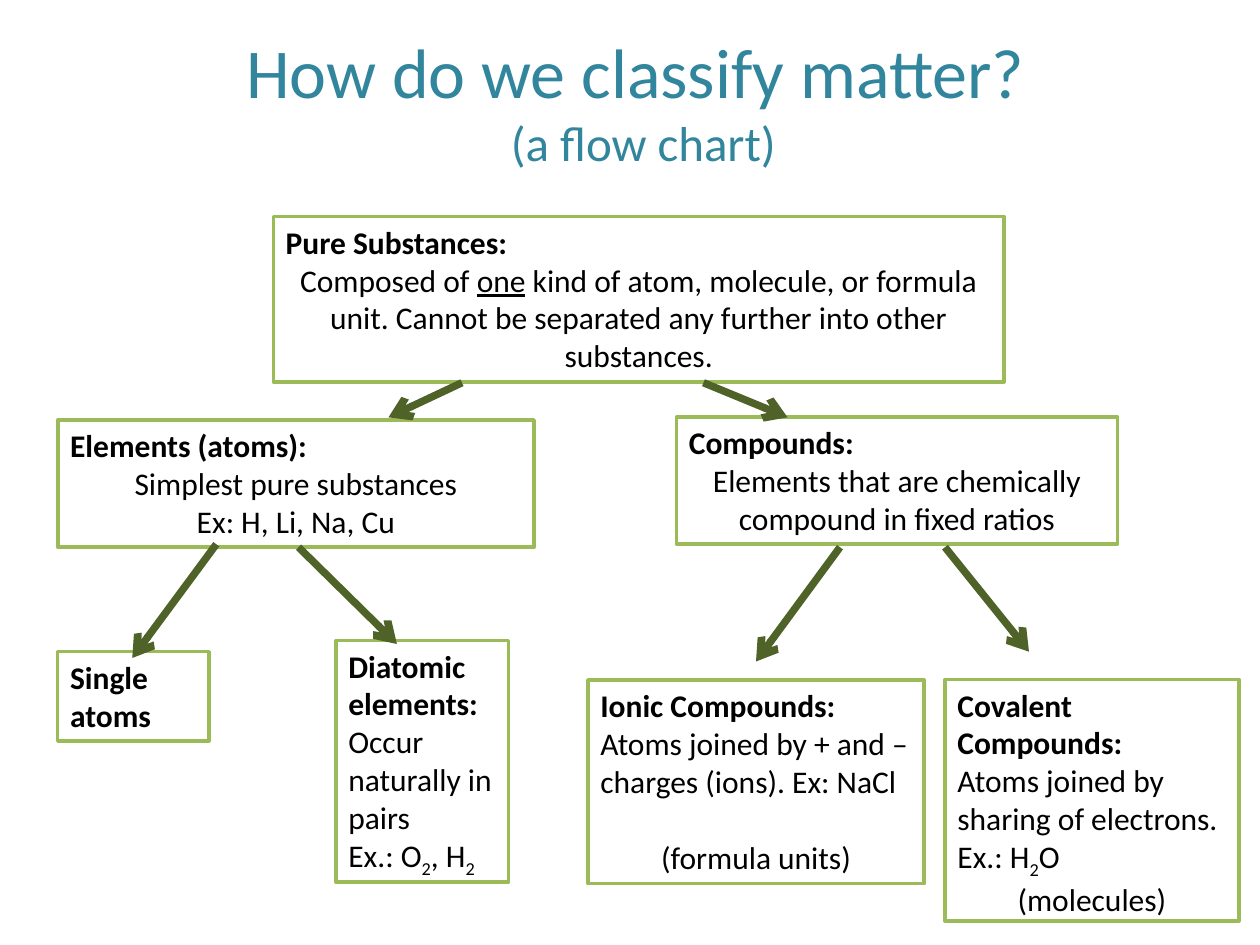
from dataclasses import dataclass

import pptx
import pptx.dml.color
import pptx.enum.shapes
import pptx.enum.text
import pptx.oxml.ns
import pptx.util
from lxml import etree

Pt = pptx.util.Pt
RGBColor = pptx.dml.color.RGBColor
ALIGN = pptx.enum.text.PP_ALIGN
ANCHOR = pptx.enum.text.MSO_ANCHOR
qn = pptx.oxml.ns.qn

FONT = "Calibri"
TEAL = RGBColor(0x31, 0x85, 0x9C)
GREEN = RGBColor(0x9B, 0xBB, 0x59)
DARK_GREEN = RGBColor(0x4F, 0x62, 0x28)
BLACK = RGBColor(0, 0, 0)
WHITE = RGBColor(0xFF, 0xFF, 0xFF)
TEXT_SIZE = 18
BLANK_LINE = 22


@dataclass(frozen=True)
class Run:
    text: str
    bold: bool = False
    underline: bool = False
    subscript: bool = False


@dataclass(frozen=True)
class Para:
    runs: tuple[Run, ...]
    centred: bool = False
    before: float = 0


@dataclass(frozen=True)
class Box:
    left: float
    top: float
    width: float
    height: float
    paras: tuple[Para, ...]


@dataclass(frozen=True)
class Arrow:
    x1: float
    y1: float
    x2: float
    y2: float


def heading(text: str) -> Para:
    return Para((Run(text, bold=True),))


def body(*parts: str | Run, centred: bool = False, before: float = 0) -> Para:
    runs = tuple(Run(part) if isinstance(part, str) else part for part in parts)
    return Para(runs, centred, before)


SUB_2 = Run("2", subscript=True)

BOXES = (
    Box(156.2, 123.8, 417.6, 94.5, (
        heading("Pure Substances:"),
        body("Composed of ", Run("one", underline=True),
             " kind of atom, molecule, or formula unit. Cannot be separated "
             "any further into other substances.", centred=True),
    )),
    Box(33, 240, 272.2, 72.7, (
        heading("Elements (atoms):"),
        body("Simplest pure substances", centred=True),
        body("Ex: H, Li, Na, Cu", centred=True),
    )),
    Box(386.6, 238.2, 252, 72.7, (
        heading("Compounds:"),
        body("Elements that are chemically compound in fixed ratios", centred=True),
    )),
    Box(33, 372.4, 86.4, 51, (heading("Single atoms"),)),
    Box(192, 366, 98.6, 138, (
        heading("Diatomic elements:"),
        body("Occur naturally in pairs"),
        body("Ex.: O", SUB_2, ", H", SUB_2),
    )),
    Box(336, 388.6, 192.2, 116.4, (
        heading("Ionic Compounds:"),
        body("Atoms joined by + and – charges (ions). Ex: NaCl"),
        body("(formula units)", centred=True, before=BLANK_LINE),
    )),
    Box(540, 388.3, 168, 138, (
        heading("Covalent"),
        heading("Compounds:"),
        body("Atoms joined by sharing of electrons."),
        body("Ex.: H", SUB_2, "O"),
        body("(molecules)", centred=True),
    )),
)

ARROWS = (
    Arrow(264, 218.7, 222, 238.5),
    Arrow(402, 218.7, 450, 238.5),
    Arrow(540, 312.7, 588, 372.4),
    Arrow(480, 312.7, 432, 378),
    Arrow(123.6, 311, 75.6, 376),
    Arrow(170.6, 312.7, 226.8, 368),
)


def add_run(p, text: str, *, size: float = TEXT_SIZE, color: RGBColor = BLACK,
            bold: bool = False, underline: bool = False, subscript: bool = False) -> None:
    r = p.add_run()
    r.text = text
    font = r.font
    font.name, font.size, font.bold = FONT, Pt(size), bold
    font.color.rgb = color
    if underline:
        font.underline = True
    if subscript:
        r._r.get_or_add_rPr().set("baseline", "-25000")


def fill_title(sp) -> None:
    sp.left, sp.top, sp.width, sp.height = Pt(16.6), Pt(12.2), Pt(702), Pt(90)
    tf = sp.text_frame
    tf.vertical_anchor = ANCHOR.MIDDLE
    p = tf.paragraphs[0]
    p.alignment = ALIGN.CENTER
    add_run(p, "How do we classify matter? ", size=40, color=TEAL)
    p.add_line_break()
    etree.SubElement(p._p[-1], qn("a:rPr"), sz="4000")
    add_run(p, "(a flow chart)", size=28, color=TEAL)


def draw_box(slide, box: Box) -> None:
    sp = slide.shapes.add_shape(
        pptx.enum.shapes.MSO_SHAPE.RECTANGLE,
        Pt(box.left), Pt(box.top), Pt(box.width), Pt(box.height))
    sp.shadow.inherit = False
    sp.fill.solid()
    sp.fill.fore_color.rgb = WHITE
    sp.line.color.rgb = GREEN
    sp.line.width = Pt(2)
    tf = sp.text_frame
    tf.word_wrap = True
    tf.auto_size = pptx.enum.text.MSO_AUTO_SIZE.SHAPE_TO_FIT_TEXT
    tf.vertical_anchor = ANCHOR.TOP
    for i, para in enumerate(box.paras):
        p = tf.add_paragraph() if i else tf.paragraphs[0]
        p.alignment = ALIGN.CENTER if para.centred else ALIGN.LEFT
        p.space_before = Pt(para.before)
        for run in para.runs:
            add_run(p, run.text, bold=run.bold, underline=run.underline,
                    subscript=run.subscript)


def draw_arrow(slide, arrow: Arrow) -> None:
    line = slide.shapes.add_connector(
        pptx.enum.shapes.MSO_CONNECTOR.STRAIGHT,
        Pt(arrow.x1), Pt(arrow.y1), Pt(arrow.x2), Pt(arrow.y2))
    line.line.color.rgb = DARK_GREEN
    line.line.width = Pt(4.25)
    etree.SubElement(line.line._get_or_add_ln(), qn("a:tailEnd"), type="arrow")
    etree.SubElement(line._element.spPr, qn("a:effectLst"))


def main() -> None:
    prs = pptx.Presentation()
    prs.slide_width, prs.slide_height = Pt(720), Pt(540)
    slide = prs.slides.add_slide(prs.slide_layouts.get_by_name("Title Only"))
    fill_title(slide.shapes.title)
    for box in BOXES:
        draw_box(slide, box)
    for arrow in ARROWS:
        draw_arrow(slide, arrow)
    prs.save("out.pptx")


if __name__ == "__main__":
    main()
